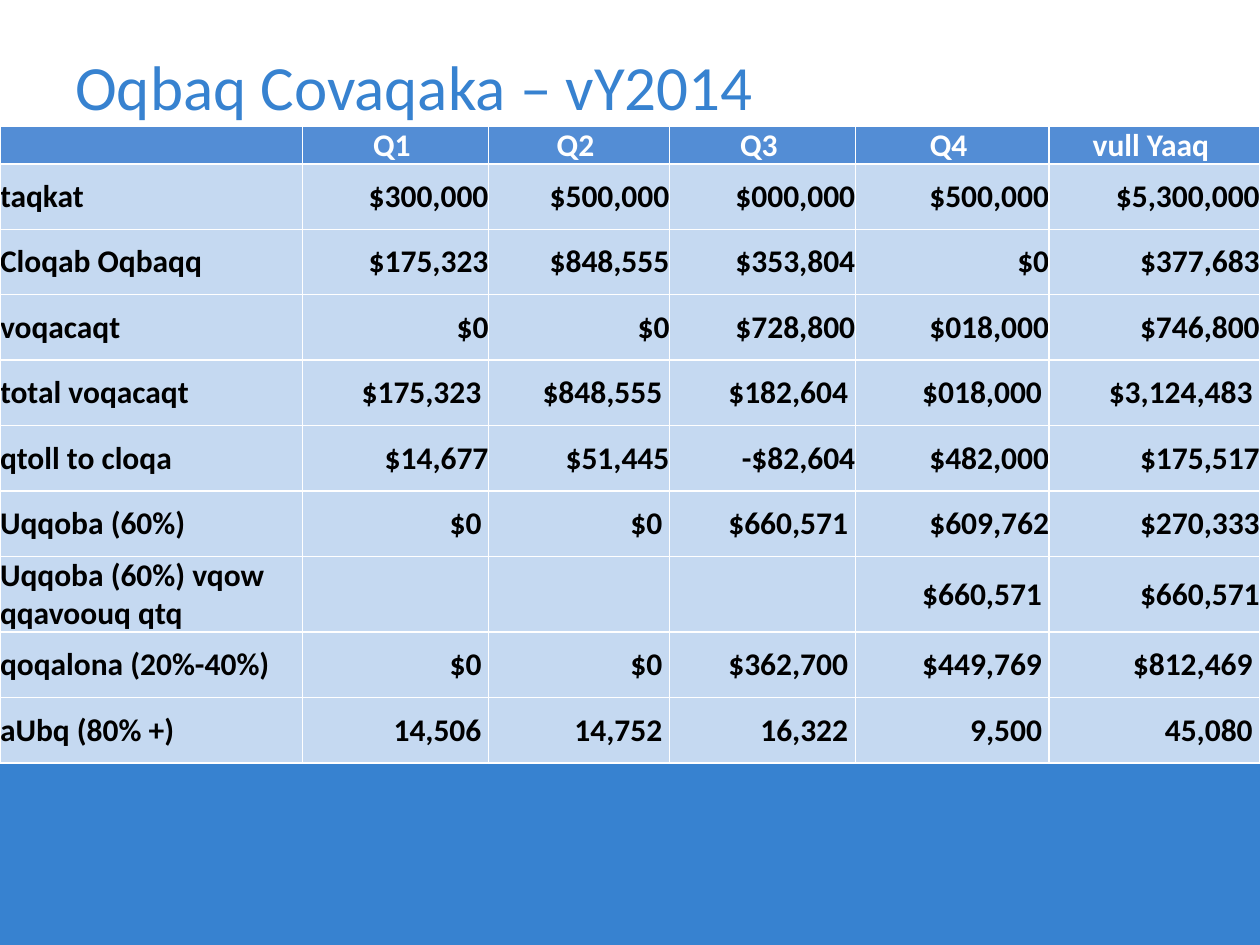
from dataclasses import dataclass

from lxml.etree import SubElement
from pptx import Presentation
from pptx.dml.color import RGBColor
from pptx.enum.shapes import MSO_SHAPE
from pptx.enum.text import MSO_ANCHOR, PP_ALIGN
from pptx.oxml.ns import qn
from pptx.util import Pt


@dataclass(frozen=True)
class Theme:
    font: str = "Calibri"
    title_size: float = 36
    table_size: float = 18
    blue: str = "3782D0"
    header: str = "538DD5"
    body: str = "C5D9F1"
    light: str = "FFFFFF"
    dark: str = "000000"


COLUMN_WIDTHS = [172.8, 106.4, 103.4, 106.2, 110.8, 120.4]
HEADER_HEIGHT, BODY_HEIGHT = 21.6, 37.4
QUARTER_ROWS = [
    ["", "Q1 ", "Q2 ", "Q3 ", "Q4 ", "vull Yaaq "],
    ["taqkat", "$300,000", "$500,000", "$000,000", "$500,000", "$5,300,000"],
    ["Cloqab Oqbaqq", "$175,323", "$848,555", "$353,804", "$0", "$377,683"],
    ["voqacaqt", "$0", "$0", "$728,800", "$018,000", "$746,800"],
    ["total voqacaqt", "$175,323 ", "$848,555 ", "$182,604 ", "$018,000 ", "$3,124,483 "],
    ["qtoll to cloqa", "$14,677", "$51,445", "-$82,604", "$482,000", "$175,517"],
    ["Uqqoba (60%)", "$0 ", "$0 ", "$660,571 ", "$609,762", "$270,333"],
    ["Uqqoba (60%) vqow qqavoouq qtq", "", "", "", "$660,571 ", "$660,571"],
    ["qoqalona (20%-40%)", "$0 ", "$0 ", "$362,700 ", "$449,769 ", "$812,469 "],
    ["aUbq (80% +)", "14,506 ", "14,752 ", "16,322 ", "9,500 ", "45,080 "],
]


def write(frame, text, *, font, size, color, bold=False, align=PP_ALIGN.LEFT):
    paragraph = frame.paragraphs[0]
    paragraph.alignment = align
    paragraph.font.size = Pt(size)
    if text:
        run = paragraph.add_run()
        run.text = text
        run.font.name = font
        run.font.size = Pt(size)
        run.font.bold = bold
        run.font.color.rgb = RGBColor.from_string(color)


class SlideBuilder:
    """Draws themed elements on the current slide, measured in points."""

    def __init__(self, slide, theme):
        self.slide = slide
        self.theme = theme

    def band(self, left, top, width, height):
        footer = self.slide.shapes.add_shape(
            MSO_SHAPE.RECTANGLE, Pt(left), Pt(top), Pt(width), Pt(height))
        footer.shadow.inherit = False
        footer.fill.solid()
        footer.fill.fore_color.rgb = RGBColor.from_string(self.theme.blue)
        footer.line.fill.background()

    def title(self, text, left, top, width, height):
        frame = self.slide.shapes.add_textbox(
            Pt(left), Pt(top), Pt(width), Pt(height)).text_frame
        frame.word_wrap = True
        frame.vertical_anchor = MSO_ANCHOR.MIDDLE
        write(frame, text, font=self.theme.font, size=self.theme.title_size,
              color=self.theme.blue)

    def table(self, rows, left, top, widths, header_height, body_height):
        heights = [header_height] + [body_height] * (len(rows) - 1)
        grid = self.slide.shapes.add_table(
            len(rows), len(widths), Pt(left), Pt(top),
            Pt(sum(widths)), Pt(sum(heights))).table
        grid.horz_banding = False
        for column, width in zip(grid.columns, widths):
            column.width = Pt(width)
        for r, (values, height) in enumerate(zip(rows, heights)):
            grid.rows[r].height = Pt(height)
            for c, value in enumerate(values):
                self.cell(grid.cell(r, c), value, heading=r == 0, label=c == 0)

    def cell(self, cell, value, heading, label):
        theme = self.theme
        cell.margin_left = cell.margin_right = cell.margin_top = cell.margin_bottom = 0
        cell.vertical_anchor = MSO_ANCHOR.MIDDLE
        self.borders(cell)
        cell.fill.solid()
        cell.fill.fore_color.rgb = RGBColor.from_string(
            theme.header if heading else theme.body)
        body_align = PP_ALIGN.LEFT if label else PP_ALIGN.RIGHT
        write(cell.text_frame, value, font=theme.font, size=theme.table_size, bold=True,
              color=theme.light if heading else theme.dark,
              align=PP_ALIGN.CENTER if heading else body_align)

    def borders(self, cell):
        properties = cell._tc.get_or_add_tcPr()
        for side in ("a:lnL", "a:lnR", "a:lnT", "a:lnB"):
            edge = SubElement(properties, qn(side), w=str(Pt(1)))
            SubElement(SubElement(edge, qn("a:solidFill")), qn("a:srgbClr"),
                       val=self.theme.light)


def main():
    deck = Presentation()
    deck.slide_width, deck.slide_height = Pt(720), Pt(540)
    builder = SlideBuilder(deck.slides.add_slide(deck.slide_layouts[6]), Theme())
    builder.band(0, 434, 720, 106)
    builder.title("Oqbaq Covaqaka – vY2014", 36, 21, 648, 55.5)
    builder.table(QUARTER_ROWS, 0, 72, COLUMN_WIDTHS, HEADER_HEIGHT, BODY_HEIGHT)
    deck.save("out.pptx")


if __name__ == "__main__":
    main()
